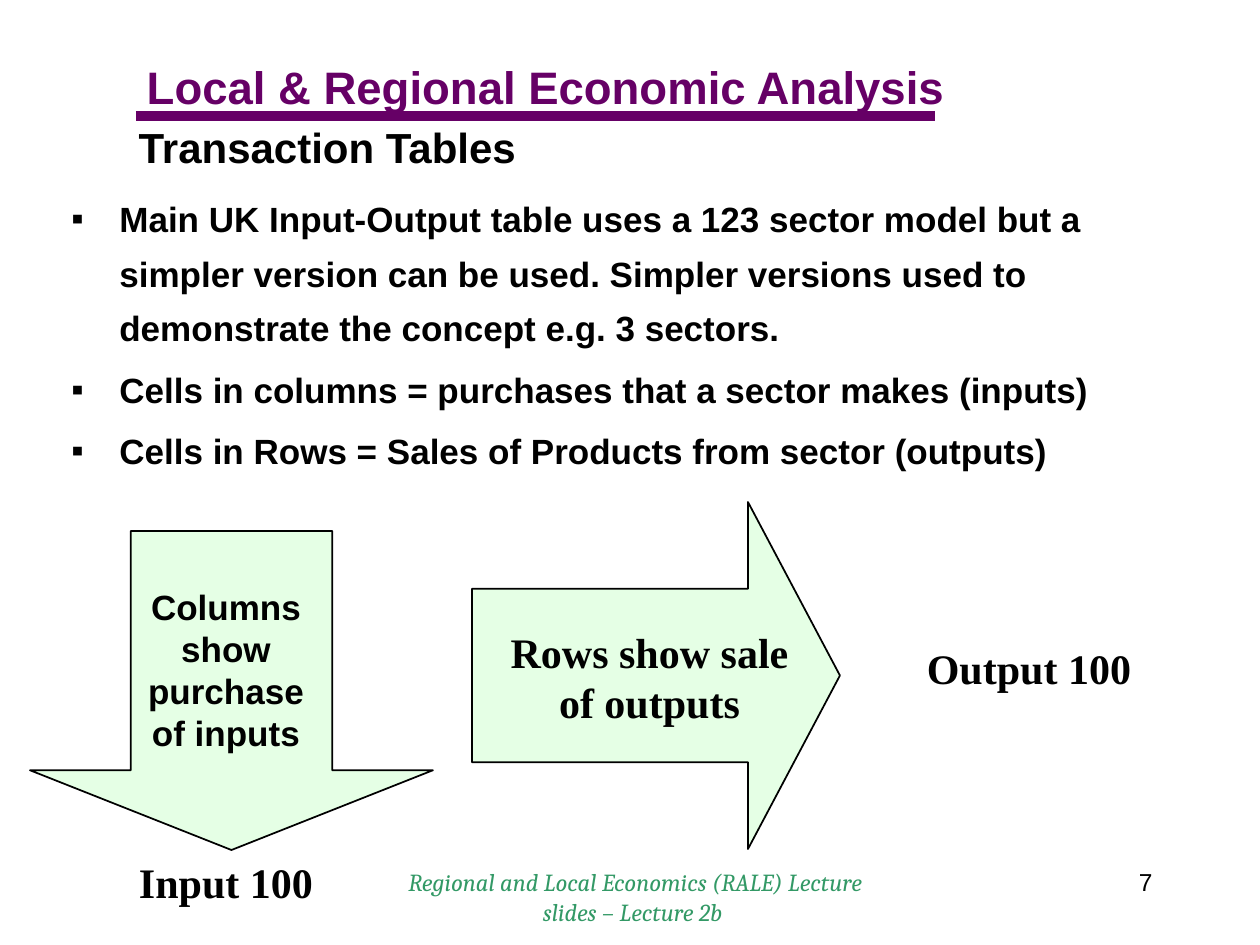
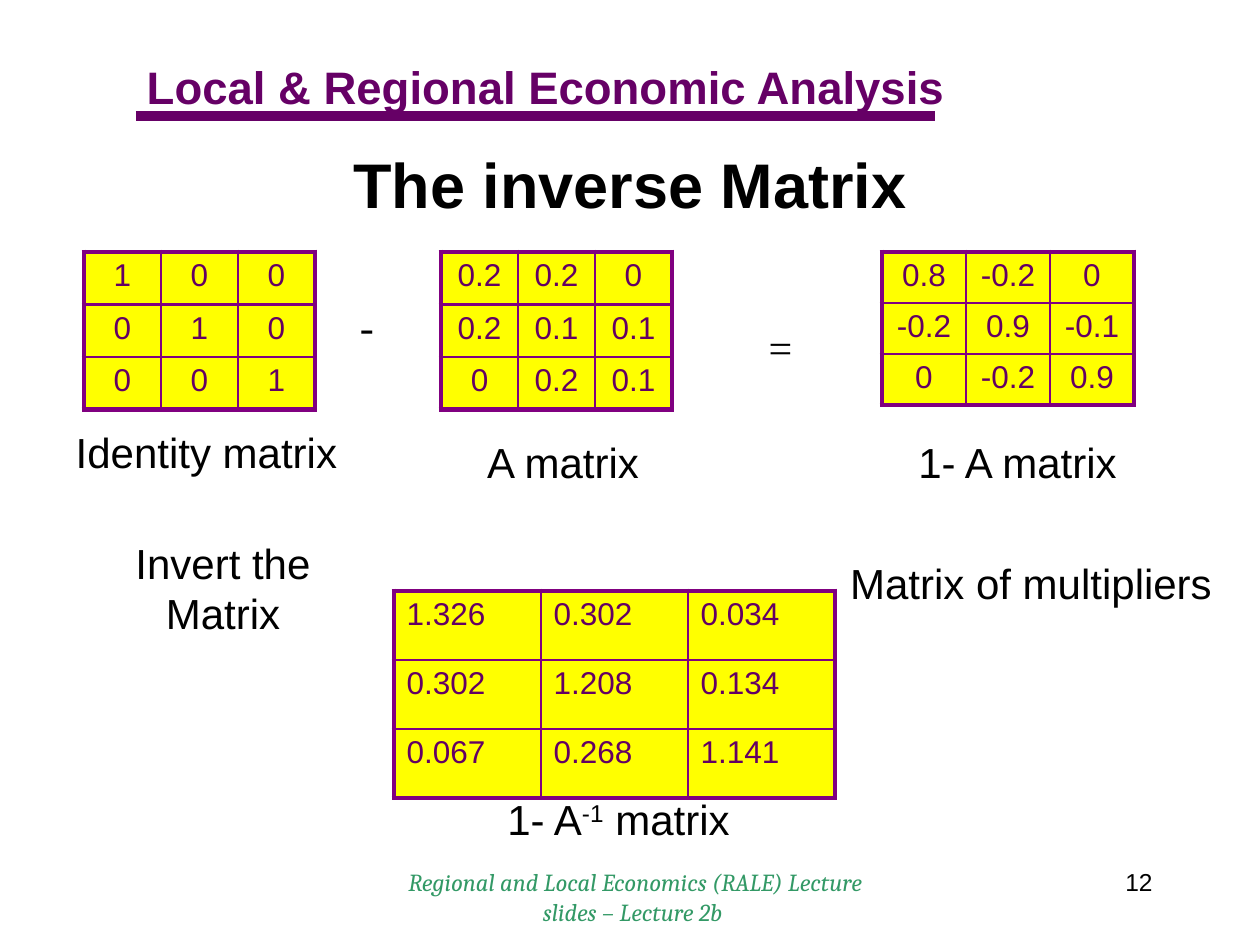
from lxml.etree import SubElement
from pptx import Presentation
from pptx.dml.color import RGBColor
from pptx.enum.shapes import MSO_CONNECTOR, MSO_SHAPE
from pptx.enum.text import MSO_ANCHOR, PP_ALIGN
from pptx.oxml.ns import qn
from pptx.util import Pt

EMU_PER_PX = 914400 / 126
PURPLE, BORDER, NUMBER_COLOR = "660066", "800080", "630063"
BLACK, GREEN, PALE_GREEN, YELLOW = "000000", "339966", "CCFFCC", "FFFF00"

HEADER = {"name": "Arial", "size": Pt(26), "bold": True, "color": PURPLE}
FOOTER = {"name": "Cambria", "size": Pt(14), "italic": True, "color": GREEN}
PAGE = {"name": "Arial", "size": Pt(14), "color": BLACK}
SUBTITLE = {"name": "Arial", "size": Pt(24), "bold": True, "color": BLACK}
BIG_TITLE = {"name": "Arial", "size": Pt(36), "bold": True, "color": BLACK}
BODY = {"name": "Arial", "size": Pt(20), "bold": True, "color": BLACK}
FLOW = {"name": "Times New Roman", "size": Pt(24), "bold": True, "color": BLACK}
LABEL = {"name": "Arial", "size": Pt(24), "color": BLACK}
OPERATOR = {"name": "Times New Roman", "size": Pt(24), "color": BLACK}
CELL = {"name": "Arial", "size": Pt(18), "color": NUMBER_COLOR}


def px(*lengths):
    return [round(length * EMU_PER_PX) for length in lengths]


def write_text(frame, text, text_format, align=PP_ALIGN.CENTER, wrap=True):
    """Write one line per paragraph; a tuple marks a superscript in its middle."""
    frame.word_wrap = wrap
    lines = text if isinstance(text, list) else [text]
    for index, line in enumerate(lines):
        paragraph = frame.add_paragraph() if index else frame.paragraphs[0]
        paragraph.alignment = align
        pieces = line if isinstance(line, tuple) else (line,)
        for position, piece in enumerate(pieces):
            run = paragraph.add_run()
            run.text = piece
            for attribute, value in text_format.items():
                if attribute == "color":
                    run.font.color.rgb = RGBColor.from_string(value)
                else:
                    setattr(run.font, attribute, value)
            if position == 1:
                run._r.get_or_add_rPr().set("baseline", "30000")


presentation = Presentation()
presentation.slide_width, presentation.slide_height = px(1260, 945)
title_only = presentation.slide_layouts[5]

# Shared parts: title, header with rule, footer and page number
slides = []
for title, title_box, title_format, align, anchor, page in [
    ("Transaction Tables", (126, 115, 748, 64), SUBTITLE, PP_ALIGN.LEFT, MSO_ANCHOR.TOP, "7"),
    ("The inverse Matrix", (95, 136, 1070, 95), BIG_TITLE, PP_ALIGN.CENTER, MSO_ANCHOR.MIDDLE, "12"),
]:
    slide = presentation.slides.add_slide(title_only)
    slides.append(slide)
    placeholder = slide.shapes.title
    placeholder.left, placeholder.top, placeholder.width, placeholder.height = px(*title_box)
    placeholder.text_frame.vertical_anchor = anchor
    write_text(placeholder.text_frame, title, title_format, align)

    for text, box, text_format, align in [
        ("Local & Regional Economic Analysis", (126, 53, 840, 67), HEADER, PP_ALIGN.CENTER),
        ("Regional and Local Economics (RALE) Lecture slides – Lecture 2b ", (368, 861, 535, 63),
         FOOTER, PP_ALIGN.CENTER),
        (page, (903, 861, 262, 63), PAGE, PP_ALIGN.RIGHT),
    ]:
        textbox = slide.shapes.add_textbox(*px(*box))
        write_text(textbox.text_frame, text, text_format, align)

    rule = slide.shapes.add_connector(MSO_CONNECTOR.STRAIGHT, *px(136, 116, 935, 116))
    rule.line.color.rgb = RGBColor.from_string(PURPLE)
    rule.line.width = Pt(6)
    SubElement(rule._element.spPr, qn("a:effectLst"))

transactions, inverse = slides

# Transaction tables: bullets
bullets = transactions.shapes.add_textbox(*px(59, 179, 1162, 262))
write_text(bullets.text_frame, [
    "Main UK Input-Output table uses a 123 sector model but a simpler version can be used. "
    "Simpler versions used to demonstrate the concept e.g. 3 sectors.",
    "Cells in columns = purchases that a sector makes (inputs)",
    "Cells in Rows = Sales of Products from sector (outputs)",
], BODY, PP_ALIGN.LEFT)
indent = px(48)[0]
for index, paragraph in enumerate(bullets.text_frame.paragraphs):
    paragraph.line_spacing = 1.3
    paragraph.space_before = Pt(3.8 if index else 0)
    properties = paragraph._p.get_or_add_pPr()
    properties.set("marL", str(indent))
    properties.set("indent", str(-indent))
    SubElement(properties, qn("a:buFont"), typeface="Arial")
    SubElement(properties, qn("a:buChar"), char="▪")

# Transaction tables: arrows and their labels
for preset, box, head in [
    (MSO_SHAPE.DOWN_ARROW, (30, 531, 403, 319), 0.25),
    (MSO_SHAPE.RIGHT_ARROW, (472, 502, 368, 347), 0.265),
]:
    arrow = transactions.shapes.add_shape(preset, *px(*box))
    arrow.adjustments[0], arrow.adjustments[1] = 0.5, head
    arrow.shadow.inherit = False
    arrow.fill.solid()
    arrow.fill.fore_color.rgb = RGBColor.from_string(PALE_GREEN)
    fill_color = arrow._element.spPr.find(qn("a:solidFill")).find(qn("a:srgbClr"))
    SubElement(fill_color, qn("a:alpha"), val="50000")
    arrow.line.color.rgb = RGBColor.from_string(BLACK)
    arrow.line.width = Pt(1)

for text, box, text_format in [
    ("Columns show purchase of inputs", (116, 579, 220, 183), BODY),
    ("Input 100", (95, 850, 262, 63), FLOW),
    ("Rows show sale of outputs", (492, 620, 315, 113), FLOW),
    ("Output 100", (908, 636, 242, 63), FLOW),
]:
    textbox = transactions.shapes.add_textbox(*px(*box))
    write_text(textbox.text_frame, text, text_format)

# Inverse matrix: identity, A, 1-A and its inverse
for left, top, column_width, row_height, align, matrix in [
    (84, 252, 77, 52.5, PP_ALIGN.CENTER, ["1 0 0", "0 1 0", "0 0 1"]),
    (441, 252, 77, 52.5, PP_ALIGN.CENTER, ["0.2 0.2 0", "0.2 0.1 0.1", "0 0.2 0.1"]),
    (882, 252, 84, 51, PP_ALIGN.CENTER, ["0.8 -0.2 0", "-0.2 0.9 -0.1", "0 -0.2 0.9"]),
    (394, 591, 147, 69, PP_ALIGN.LEFT,
     ["1.326 0.302 0.034", "0.302 1.208 0.134", "0.067 0.268 1.141"]),
]:
    frame = inverse.shapes.add_table(3, 3, *px(left, top, 3 * column_width, 3 * row_height))
    table = frame.table
    table.first_row = table.horz_banding = False
    for column in table.columns:
        column.width = px(column_width)[0]
    for row_index, row in enumerate(matrix):
        table.rows[row_index].height = px(row_height)[0]
        for column_index, value in enumerate(row.split()):
            cell = table.cell(row_index, column_index)
            write_text(cell.text_frame, value, CELL, align)
            cell_properties = cell._tc.get_or_add_tcPr()
            for side, is_outer in [("L", column_index == 0), ("R", column_index == 2),
                                   ("T", row_index == 0), ("B", row_index == 2)]:
                width = Pt(3 if is_outer else 1.5)
                border = SubElement(cell_properties, qn(f"a:ln{side}"), w=str(int(width)))
                SubElement(SubElement(border, qn("a:solidFill")), qn("a:srgbClr"), val=BORDER)
            cell.fill.solid()
            cell.fill.fore_color.rgb = RGBColor.from_string(YELLOW)

# Inverse matrix: operators and captions
for text, box, text_format, wrap in [
    ("-", (347, 294, 40, 63), OPERATOR, False),
    ("=", (756, 315, 49, 63), OPERATOR, False),
    ("Identity matrix", (63, 420, 287, 63), LABEL, False),
    ("A matrix", (473, 430, 180, 63), LABEL, False),
    ("1- A matrix", (903, 430, 229, 63), LABEL, False),
    ("Invert the Matrix", (103, 531, 240, 113), LABEL, True),
    (("1- A", "-1", " matrix"), (492, 787, 253, 63), LABEL, False),
    ("Matrix of multipliers", (837, 551, 388, 63), LABEL, False),
]:
    textbox = inverse.shapes.add_textbox(*px(*box))
    write_text(textbox.text_frame, text, text_format, wrap=wrap)

presentation.save("out.pptx")
